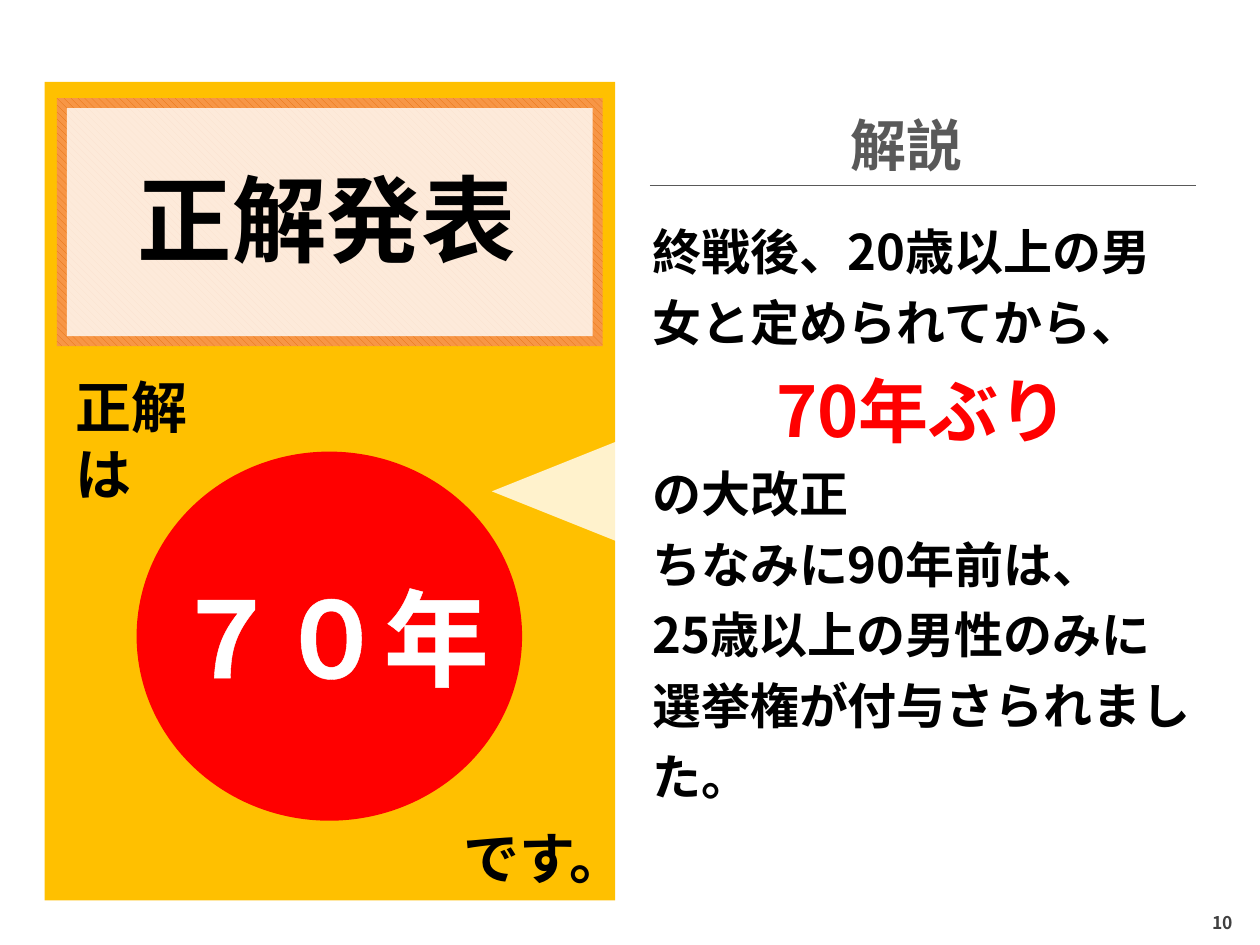
import dataclasses
import pptx
import pptx.util
import pptx.dml.color
import pptx.enum.dml
import pptx.enum.shapes
import pptx.enum.text
import pptx.oxml.ns
import lxml.etree

Cm = pptx.util.Cm
Pt = pptx.util.Pt
Shape = pptx.enum.shapes.MSO_SHAPE
Align = pptx.enum.text.PP_ALIGN
qn = pptx.oxml.ns.qn


@dataclasses.dataclass(frozen=True)
class Theme:
    font: str = "Noto Sans CJK JP"
    white: str = "FFFFFF"
    black: str = "000000"
    red: str = "FF0000"
    yellow: str = "FFC000"
    orange: str = "F79646"
    dark_orange: str = "E46C0A"
    gray: str = "595959"
    dark_gray: str = "404040"
    number: int = 10
    body: int = 28
    label: int = 32
    emphasis: int = 40
    title: int = 54
    answer: int = 60


def rgb(color):
    return pptx.dml.color.RGBColor.from_string(color)


class SlideBuilder:
    def __init__(self, deck, theme):
        self.theme = theme
        self.page = deck.slides.add_slide(deck.slide_layouts[6])

    def shape(self, kind, frame, fill, opacity=100, line=None, width=0.5):
        shape = self.page.shapes.add_shape(kind, *map(Cm, frame))
        shape.shadow.inherit = False
        shape.fill.solid()
        shape.fill.fore_color.rgb = rgb(fill)
        if opacity < 100:
            color = shape._element.spPr.find(qn("a:solidFill"))[0]
            lxml.etree.SubElement(color, qn("a:alpha"), val=str(opacity * 1000))
        if line:
            shape.line.color.rgb = rgb(line)
            shape.line.width = Pt(width)
        else:
            shape.line.fill.background()
        return shape

    def hatch(self, shape, front, back):
        shape.fill.patterned()
        shape.fill.pattern = pptx.enum.dml.MSO_PATTERN.WIDE_DOWNWARD_DIAGONAL
        shape.fill.fore_color.rgb = rgb(front)
        shape.fill.back_color.rgb = rgb(back)

    def rule(self, left, right, top, color):
        line = self.page.shapes.add_connector(
            pptx.enum.shapes.MSO_CONNECTOR.STRAIGHT,
            Cm(left), Cm(top), Cm(right), Cm(top))
        line.line.color.rgb = rgb(color)
        line.line.width = Pt(0.75)
        lxml.etree.SubElement(line._element.spPr, qn("a:effectLst"))

    def text(self, frame, paragraphs, wrap=False, spacing=None):
        box = self.page.shapes.add_textbox(*map(Cm, frame))
        self.fill_text(box.text_frame, paragraphs, wrap, spacing)
        return box

    def fill_text(self, text_frame, paragraphs, wrap=False, spacing=None):
        text_frame.word_wrap = wrap
        for index, (words, size, color, align) in enumerate(paragraphs):
            para = text_frame.add_paragraph() if index else text_frame.paragraphs[0]
            para.alignment = align
            if spacing:
                para.line_spacing = spacing
            span = para.add_run()
            span.text = words
            span.font.size = Pt(size)
            span.font.bold = True
            span.font.name = self.theme.font
            span.font.color.rgb = rgb(color)
            east_asian = lxml.etree.Element(qn("a:ea"), typeface=self.theme.font)
            span._r.rPr.find(qn("a:latin")).addnext(east_asian)

    def outline(self, box, color, width):
        for para in box.text_frame.paragraphs:
            for span in para.runs:
                line = lxml.etree.Element(qn("a:ln"), w=str(int(Pt(width))))
                fill = lxml.etree.SubElement(line, qn("a:solidFill"))
                lxml.etree.SubElement(fill, qn("a:srgbClr"), val=color)
                span._r.rPr.insert(0, line)


def draw_background(slide, theme):
    slide.shape(Shape.RECTANGLE, (0.46, 0.48, 24.5, 18.6), theme.white, 20, theme.white)
    slide.shape(Shape.RECTANGLE, (0.9, 1.65, 11.5, 16.5), theme.yellow)
    border = slide.shape(Shape.RECTANGLE, (1.15, 1.98, 11, 5), theme.orange)
    slide.hatch(border, theme.dark_orange, theme.orange)
    slide.shape(Shape.RECTANGLE, (1.35, 2.18, 10.6, 4.6), theme.white, 80)
    card = slide.shape(Shape.ROUNDED_RECTANGLE, (12.85, 1.65, 11.65, 16.5), theme.white, 80)
    card.adjustments[0] = 0.06
    pointer = slide.shape(Shape.ISOSCELES_TRIANGLE, (10.24, 8.28, 2.6, 3.25), theme.white, 80)
    pointer.rotation = 270


def draw_answer(slide, theme):
    slide.text((2.49, 3.12, 8.2, 2.57),
               [("正解発表", theme.title, theme.black, Align.CENTER)])
    slide.text((1.27, 7.39, 3.8, 1.63),
               [("正解は", theme.label, theme.black, Align.LEFT)], wrap=True)
    slide.text((9.09, 16.48, 3.25, 1.63),
               [("です。", theme.label, theme.black, Align.LEFT)])
    slide.shape(Shape.OVAL, (2.79, 9.14, 7.7, 7.37), theme.red, line=theme.red, width=2)
    answer = slide.text((2.87, 11.43, 7.62, 2.82),
                        [("７０年", theme.answer, theme.white, Align.CENTER)], wrap=True)
    slide.outline(answer, theme.white, 1.5)


def draw_explanation(slide, theme):
    slide.text((16.89, 2.11, 2.8, 1.63),
               [("解説", theme.label, theme.gray, Align.LEFT)])
    slide.rule(13.1, 24.1, 3.74, theme.gray)
    body = (theme.body, theme.black, Align.LEFT)
    slide.text((12.9, 4.11, 11.4, 10.92), [
        ("終戦後、20歳以上の男女と定められてから、", *body),
        ("70年ぶり", theme.emphasis, theme.red, Align.CENTER),
        ("の大改正", *body),
        ("ちなみに90年前は、", *body),
        ("25歳以上の男性のみに選挙権が付与さられました。", *body),
    ], wrap=True, spacing=1.2)


def draw_page_number(slide, theme):
    number = slide.shape(Shape.RECTANGLE, (23.9, 18.16, 1.5, 0.89), theme.white)
    text_frame = number.text_frame
    text_frame.margin_left = text_frame.margin_right = Cm(0.1)
    text_frame.margin_top = text_frame.margin_bottom = Cm(0.1)
    text_frame.vertical_anchor = pptx.enum.text.MSO_ANCHOR.MIDDLE
    slide.fill_text(text_frame, [("10", theme.number, theme.dark_gray, Align.CENTER)])


def main():
    deck = pptx.Presentation()
    deck.slide_width = Cm(25.4)
    deck.slide_height = Cm(19.05)
    theme = Theme()
    slide = SlideBuilder(deck, theme)
    for draw in (draw_background, draw_page_number, draw_answer, draw_explanation):
        draw(slide, theme)
    deck.save("out.pptx")


if __name__ == "__main__":
    main()
